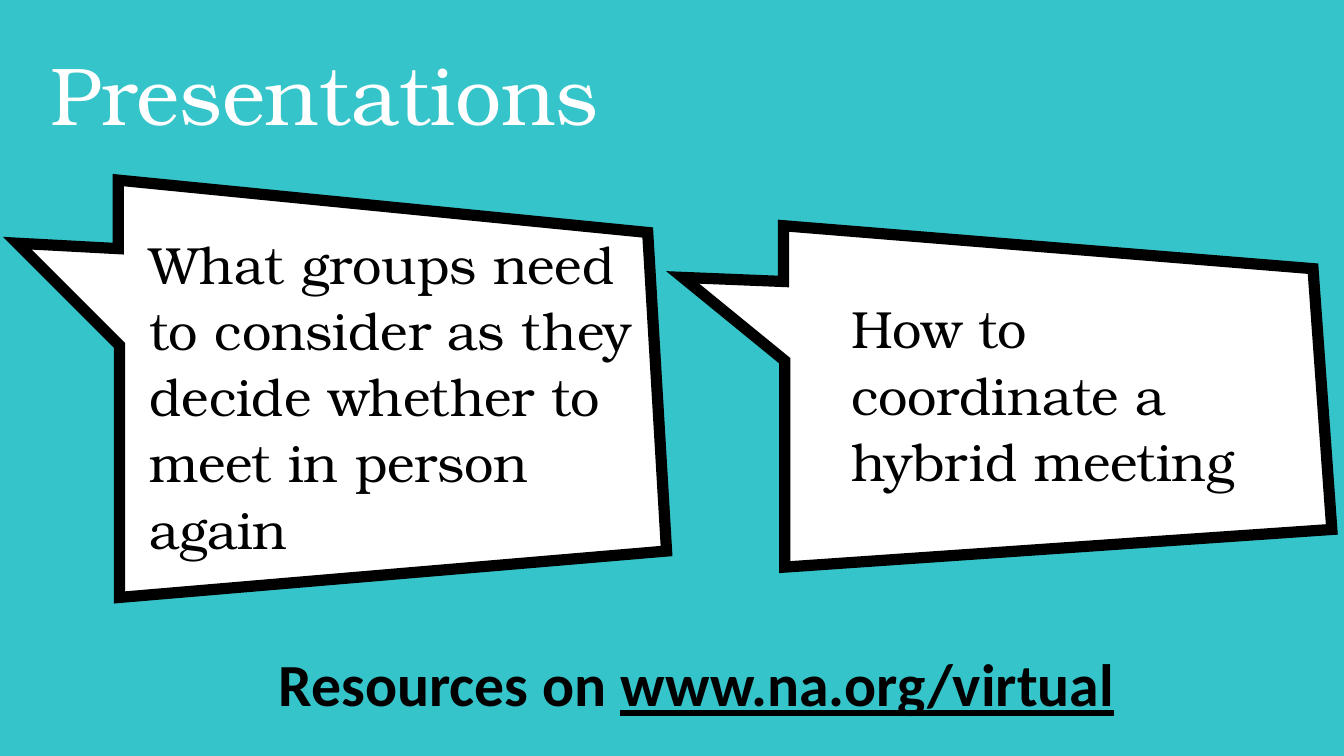
from lxml import etree
from pptx import Presentation
from pptx.dml.color import RGBColor
from pptx.enum.text import MSO_AUTO_SIZE
from pptx.oxml.ns import qn
from pptx.util import Pt

PX = 4572
SHAPE_TO_FIT = MSO_AUTO_SIZE.SHAPE_TO_FIT_TEXT
TEAL = RGBColor(0x35, 0xC4, 0xCA)
WHITE = RGBColor(0xFF, 0xFF, 0xFF)
BLACK = RGBColor(0x00, 0x00, 0x00)
SERIF = "TeX Gyre Bonum"
SANS = "Calibri"
BUBBLE_OUTLINE = [(150, 0), (150, 102), (0, 94), (152, 246), (152, 621), (966, 552), (938, 78)]
BUBBLE_HEIGHT = 621


class SlideBuilder:
    """Draws speech bubbles and text on one slide in a shared style."""

    def __init__(self, presentation, background):
        self.slide = presentation.slides.add_slide(presentation.slide_layouts[6])
        fill = self.slide.background.fill
        fill.solid()
        fill.fore_color.rgb = background

    def bubble(self, left, top, height):
        points = [(left + x, top + round(y * height / BUBBLE_HEIGHT)) for x, y in BUBBLE_OUTLINE]
        builder = self.slide.shapes.build_freeform(*points[0], scale=PX)
        builder.add_line_segments(points[1:], close=True)
        shape = builder.convert_to_shape()
        shape.shadow.inherit = False
        shape.fill.solid()
        shape.fill.fore_color.rgb = WHITE
        shape.line.color.rgb = BLACK
        shape.line.width = Pt(6)
        outline = shape.element.spPr.find(qn("a:ln"))
        etree.SubElement(outline, qn("a:miter"), lim="800000")

    def text(self, box, lines, size, color=BLACK, font=SERIF, spacing=None, inset=20, frame_format=None):
        shape = self.slide.shapes.add_textbox(*(value * PX for value in box))
        frame = shape.text_frame
        frame_values = {
            "word_wrap": True,
            "margin_left": 20 * PX,
            "margin_right": 20 * PX,
            "margin_top": inset * PX,
            "margin_bottom": inset * PX,
            **(frame_format or {}),
        }
        for name, value in frame_values.items():
            setattr(frame, name, value)
        paragraph = frame.paragraphs[0]
        if spacing:
            paragraph.line_spacing = Pt(spacing)
        for index, runs in enumerate(lines):
            if index:
                paragraph.add_line_break()
            for words, run_format in runs:
                run = paragraph.add_run()
                run.text = words
                run.font.color.rgb = color
                for name, value in {"name": font, "size": Pt(size), **run_format}.items():
                    setattr(run.font, name, value)


def main():
    presentation = Presentation()
    presentation.slide_width = 2000 * PX
    presentation.slide_height = 1125 * PX
    builder = SlideBuilder(presentation, TEAL)

    builder.bubble(26, 268, 621)
    builder.text((55, 44, 908, 164), [[("Presentations", {})]], 44, WHITE)
    builder.bubble(1016, 336, 508)
    builder.text(
        (203, 321, 758, 454),
        [
            [("What groups need ", {})],
            [("to consider as they decide whether to meet in person again", {})],
        ],
        28,
        spacing=35.4,
    )
    builder.text((1247, 416, 696, 466), [[("How to coordinate a hybrid meeting", {})]], 28, spacing=35.6)
    builder.text(
        (395, 953, 1332, 128),
        [[("Resources on ", {"bold": True}), ("www.na.org/virtual", {"bold": True, "underline": True})]],
        32,
        font=SANS,
        inset=10,
        frame_format={"word_wrap": False, "auto_size": SHAPE_TO_FIT},
    )
    presentation.save("out.pptx")


if __name__ == "__main__":
    main()
